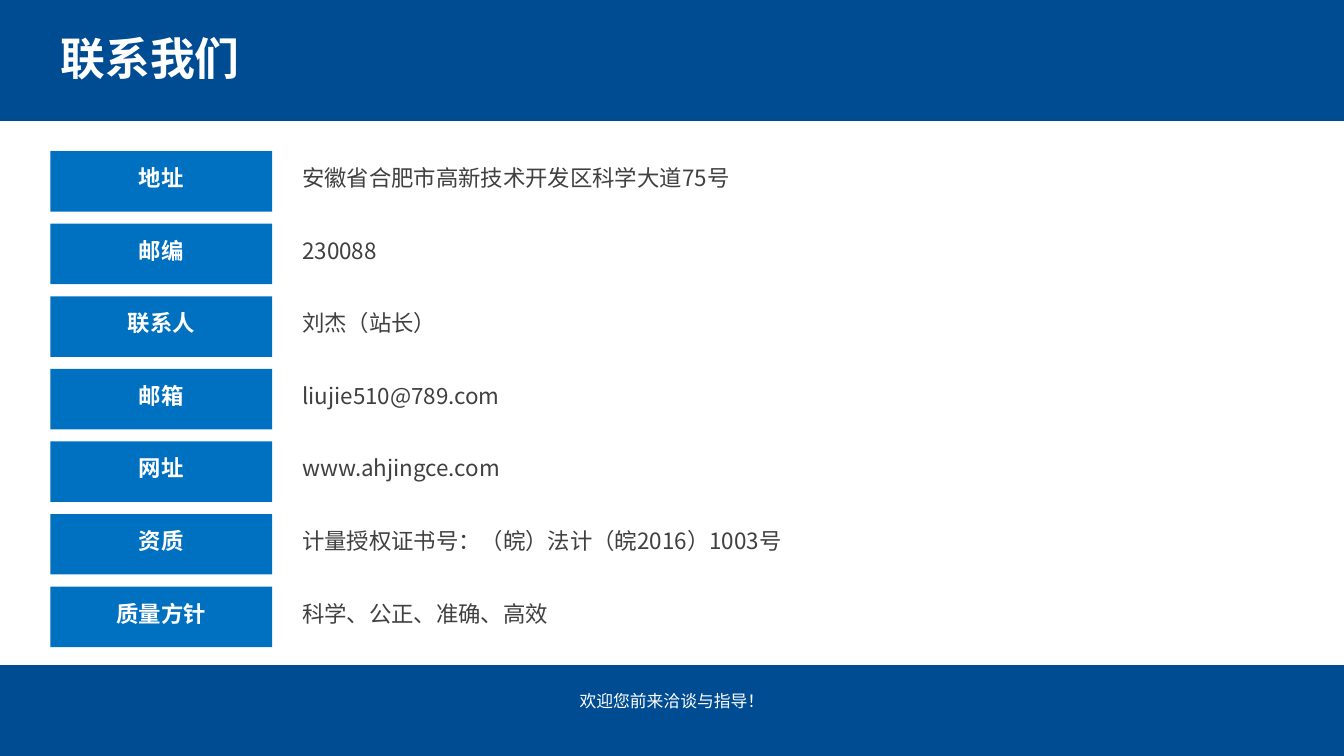
"""Build the contact slide: title band, seven labelled rows and a closing band."""
from lxml.etree import SubElement
from pptx import Presentation
from pptx.dml.color import RGBColor
from pptx.enum.shapes import MSO_SHAPE as SHAPE
from pptx.enum.text import MSO_ANCHOR as ANCHOR, MSO_AUTO_SIZE as AUTO, PP_ALIGN as ALIGN
from pptx.oxml.ns import qn
from pptx.util import Inches, Pt

NAVY = RGBColor(0x00, 0x4C, 0x92)
BLUE = RGBColor(0x00, 0x70, 0xC0)
GREY = RGBColor(0x40, 0x40, 0x40)
WHITE = RGBColor(0xFF, 0xFF, 0xFF)
FONT = "Noto Sans CJK SC"
WIDTH = 13.33
ROW_TOP, ROW_STEP, ROW_HEIGHT = 1.5, 0.72, 0.6

TITLE = {"size": Pt(32), "bold": True}
LABEL = {"size": Pt(16), "bold": True}
VALUE = {"size": Pt(16), "bold": False}
CLOSING = {"size": Pt(12), "bold": False}

ROWS = [
    ("地址", "安徽省合肥市高新技术开发区科学大道75号"),
    ("邮编", "230088"),
    ("联系人", "刘杰（站长）"),
    ("邮箱", "liujie510@789.com"),
    ("网址", "www.ahjingce.com"),
    ("资质", "计量授权证书号：（皖）法计（皖2016）1003号"),
    ("质量方针", "科学、公正、准确、高效"),
]


def add_rect(left, top, width, height, color):
    sp = s.shapes.add_shape(SHAPE.RECTANGLE, Inches(left), Inches(top), Inches(width), Inches(height))
    sp.shadow.inherit = False
    sp.fill.solid()
    sp.fill.fore_color.rgb = color
    sp.line.fill.background()
    return sp


def write(sp, text, style, color, align=ALIGN.LEFT, inset=0.05):
    tf = sp.text_frame
    frame = {"word_wrap": True, "auto_size": AUTO.NONE, "vertical_anchor": ANCHOR.TOP,
             "margin_top": Inches(inset)}
    for name, value in frame.items():
        setattr(tf, name, value)
    p = tf.paragraphs[0]
    p.alignment = align
    r = p.add_run()
    r.text = text
    for name, value in style.items():
        setattr(r.font, name, value)
    r.font.name = FONT
    r.font.color.rgb = color
    SubElement(r.font._element, qn("a:ea"), typeface=FONT)


prs = Presentation()
prs.slide_width, prs.slide_height = Inches(WIDTH), Inches(7.5)
s = prs.slides.add_slide(prs.slide_layouts[5])

add_rect(0, 0, WIDTH, 1.2, NAVY)
title = s.shapes.title
title.left, title.top, title.width, title.height = Inches(0.5), Inches(0.25), Inches(9), Inches(0.64)
write(title, "联系我们", TITLE, WHITE)
title.element.getparent().append(title.element)

for i, (label, value) in enumerate(ROWS):
    top = ROW_TOP + i * ROW_STEP
    tag = add_rect(0.5, top, 2.2, ROW_HEIGHT, BLUE)
    write(tag, label, LABEL, WHITE, ALIGN.CENTER, 0.13)
    box = s.shapes.add_textbox(Inches(2.9), Inches(top + 0.08), Inches(6.5), Inches(0.37))
    write(box, value, VALUE, GREY)

footer = add_rect(0, 6.6, WIDTH, 0.9, NAVY)
write(footer, "欢迎您前来洽谈与指导！", CLOSING, WHITE, ALIGN.CENTER, 0.25)

prs.save("out.pptx")
